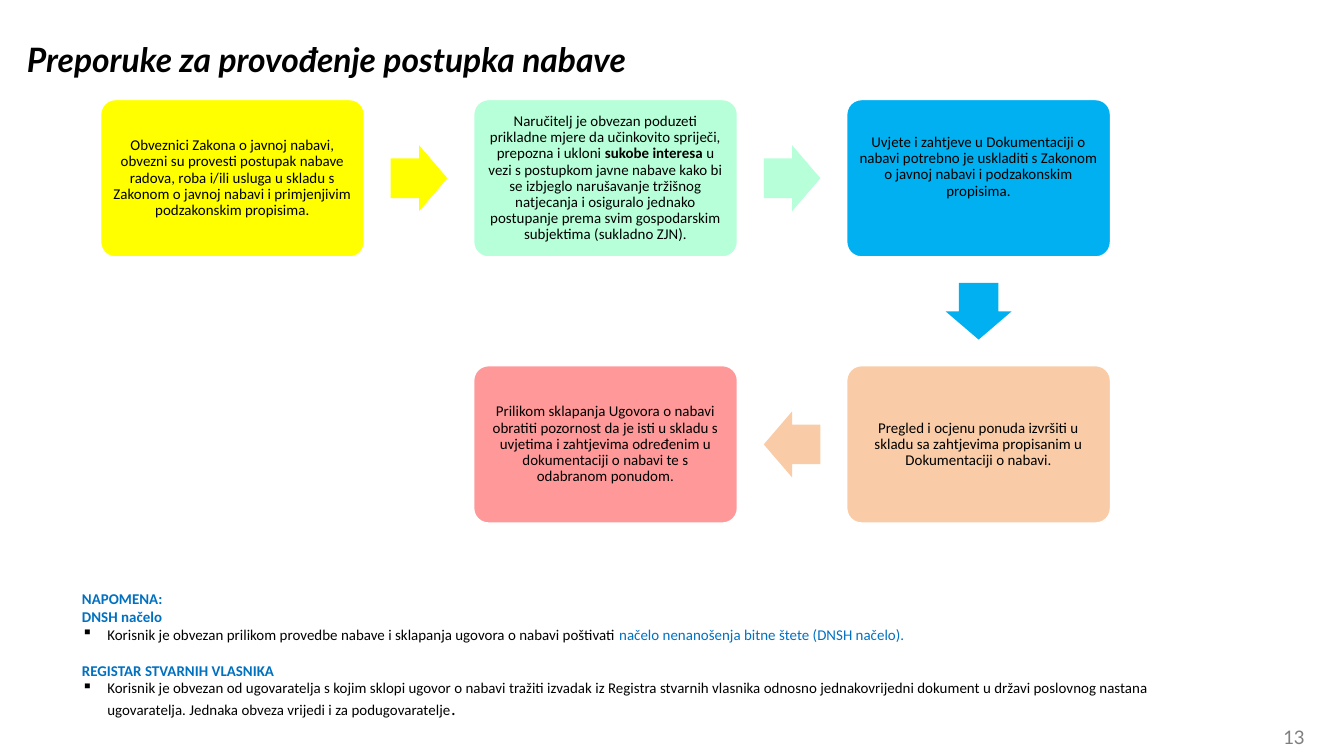
from pptx import Presentation
from pptx.dml.color import RGBColor
from pptx.enum.shapes import MSO_SHAPE
from pptx.enum.text import MSO_ANCHOR, PP_ALIGN
from pptx.oxml.ns import qn
from pptx.util import Cm, Pt
from lxml.etree import SubElement

COLOURS = {
    "black": "000000", "white": "FFFFFF", "grey": "7F7F7F", "note": "0070C0",
    "yellow": "FFFF00", "mint": "B6FFD8", "sky": "00B0F0",
    "peach": "F9CCA7", "rose": "FF9999",
}
BODY = {"name": "Calibri", "size": Pt(8)}
HEADING = {**BODY, "bold": True}
TITLE = {"name": "Lato", "size": Pt(18), "bold": True, "italic": True}
NUMBER = {"name": "Lato", "size": Pt(10)}

# Each step: column, row, colour, extra bottom inset in cm, spans of text
STEPS = [
    (0, 0, "yellow", 0, [("Obveznici Zakona o javnoj nabavi, obvezni su provesti postupak nabave radova, roba i/ili usluga u skladu s Zakonom o javnoj nabavi i primjenjivim podzakonskim propisima.", BODY)]),
    (1, 0, "mint", 0, [
        ("Naručitelj je obvezan poduzeti prikladne mjere da učinkovito spriječi, prepozna i ukloni ", BODY),
        ("sukobe interesa ", HEADING),
        ("u vezi s postupkom javne nabave kako bi se izbjeglo narušavanje tržišnog natjecanja i osiguralo jednako postupanje prema svim gospodarskim subjektima (sukladno ZJN).", BODY)]),
    (2, 0, "sky", 0.42, [("Uvjete i zahtjeve u Dokumentaciji o nabavi potrebno je uskladiti s Zakonom o javnoj nabavi i podzakonskim propisima.", BODY)]),
    (2, 1, "peach", 0, [("Pregled i ocjenu ponuda izvršiti u skladu sa zahtjevima propisanim u Dokumentaciji o nabavi.", BODY)]),
    (1, 1, "rose", 0, [("Prilikom sklapanja Ugovora o nabavi obratiti pozornost da je isti u skladu s uvjetima i zahtjevima određenim u dokumentaciji o nabavi te s odabranom ponudom.", BODY)]),
]

# Each note: bulleted, space before in points, spans of text
NOTES = [
    (False, 0, [("NAPOMENA:", HEADING, "note")]),
    (False, 0, [("DNSH načelo", HEADING, "note")]),
    (True, 0, [
        ("Korisnik je obvezan prilikom provedbe nabave i sklapanja ugovora o nabavi poštivati ", BODY, "black"),
        ("načelo nenanošenja bitne štete (DNSH načelo).", BODY, "note")]),
    (False, 9.6, [("REGISTAR STVARNIH VLASNIKA", HEADING, "note")]),
    (True, 0, [
        ("Korisnik je obvezan od ugovaratelja s kojim sklopi ugovor o nabavi tražiti izvadak iz Registra stvarnih vlasnika odnosno jednakovrijedni dokument u državi poslovnog nastana ugovaratelja. Jednaka obveza vrijedi i za podugovaratelje", BODY, "black"),
        (".", {**BODY, "size": Pt(10)}, "black")]),
]


def colour(name):
    return RGBColor.from_string(COLOURS[name])


def set_insets(frame, left, top, right, bottom):
    frame.margin_left, frame.margin_top = Cm(left), Cm(top)
    frame.margin_right, frame.margin_bottom = Cm(right), Cm(bottom)


def add_span(para, text, formats, ink="black"):
    span = para.add_run()
    span.text = text
    for name, value in formats.items():
        setattr(span.font, name, value)
    span.font.color.rgb = colour(ink)


def add_text_box(page, box):
    frame = page.shapes.add_textbox(*map(Cm, box)).text_frame
    frame.word_wrap = True
    return frame


def add_filled_shape(page, kind, box, fill):
    shape = page.shapes.add_shape(kind, *map(Cm, box))
    shape.shadow.inherit = False
    shape.fill.solid()
    shape.fill.fore_color.rgb = colour(fill)
    shape.line.fill.background()
    return shape


def add_line(page, box, text, formats, ink="black", align=PP_ALIGN.LEFT):
    """One line of text without insets, for the title and page number."""
    frame = add_text_box(page, box)
    set_insets(frame, 0, 0, 0, 0)
    para = frame.paragraphs[0]
    para.alignment = align
    add_span(para, text, formats, ink)


def add_step(page, box, fill, extra_bottom, spans):
    shape = add_filled_shape(page, MSO_SHAPE.ROUNDED_RECTANGLE, box, fill)
    shape.adjustments[0] = 0.1
    shape.line.color.rgb = colour("white")
    shape.line.width = Pt(2)
    frame = shape.text_frame
    frame.word_wrap = True
    frame.vertical_anchor = MSO_ANCHOR.MIDDLE
    set_insets(frame, 0.17, 0.17, 0.17, 0.17 + extra_bottom)
    para = frame.paragraphs[0]
    para.alignment = PP_ALIGN.CENTER
    para.line_spacing = 0.9
    for text, formats in spans:
        add_span(para, text, formats)


def add_flow(page, box):
    """Steps on a grid of three by two, with arrows midway between them."""
    left, top, width, height = box
    step_width, step_height = 5.03, 3.02
    arrow_width, arrow_height = 1.07, 1.25
    column_pitch = (width - step_width) / 2
    row_pitch = height - step_height

    def centre(step):
        return (left + step[0] * column_pitch + step_width / 2,
                top + step[1] * row_pitch + step_height / 2)

    for step in STEPS:
        x, y = centre(step)
        add_step(page, (x - step_width / 2, y - step_height / 2,
                        step_width, step_height), *step[2:])

    angles = {(1, 0): 0, (0, 1): 90, (-1, 0): 180}
    for start, end in zip(STEPS, STEPS[1:]):
        x, y = ((a + b) / 2 for a, b in zip(centre(start), centre(end)))
        arrow = add_filled_shape(
            page, MSO_SHAPE.RIGHT_ARROW,
            (x - arrow_width / 2, y - arrow_height / 2,
             arrow_width, arrow_height), start[2])
        arrow.adjustments[0] = 0.6
        arrow.adjustments[1] = 0.5
        arrow.rotation = angles[end[0] - start[0], end[1] - start[1]]


def add_notes_block(page, box):
    frame = add_text_box(page, box)
    for index, (bulleted, space, spans) in enumerate(NOTES):
        para = frame.add_paragraph() if index else frame.paragraphs[0]
        if space:
            para.space_before = Pt(space)
        if bulleted:
            properties = para._p.get_or_add_pPr()
            properties.set("marL", str(Cm(0.48)))
            properties.set("indent", str(-Cm(0.48)))
            SubElement(properties, qn("a:buChar")).set("char", "▪")
        for text, formats, ink in spans:
            add_span(para, text, formats, ink)


def main():
    deck = Presentation()
    deck.slide_width, deck.slide_height = Cm(25.4), Cm(14.29)
    page = deck.slides.add_slide(deck.slide_layouts[6])
    add_line(page, (19.23, 13.72, 5.43, 0.58), "13", NUMBER, "grey", PP_ALIGN.RIGHT)
    add_line(page, (0.51, 0.74, 24.64, 2.34),
             "Preporuke za provođenje postupka nabave", TITLE)
    add_flow(page, (1.88, 1.86, 19.13, 8.05))
    add_notes_block(page, (1.3, 11.02, 21.21, 2.74))
    deck.save("out.pptx")


if __name__ == "__main__":
    main()
